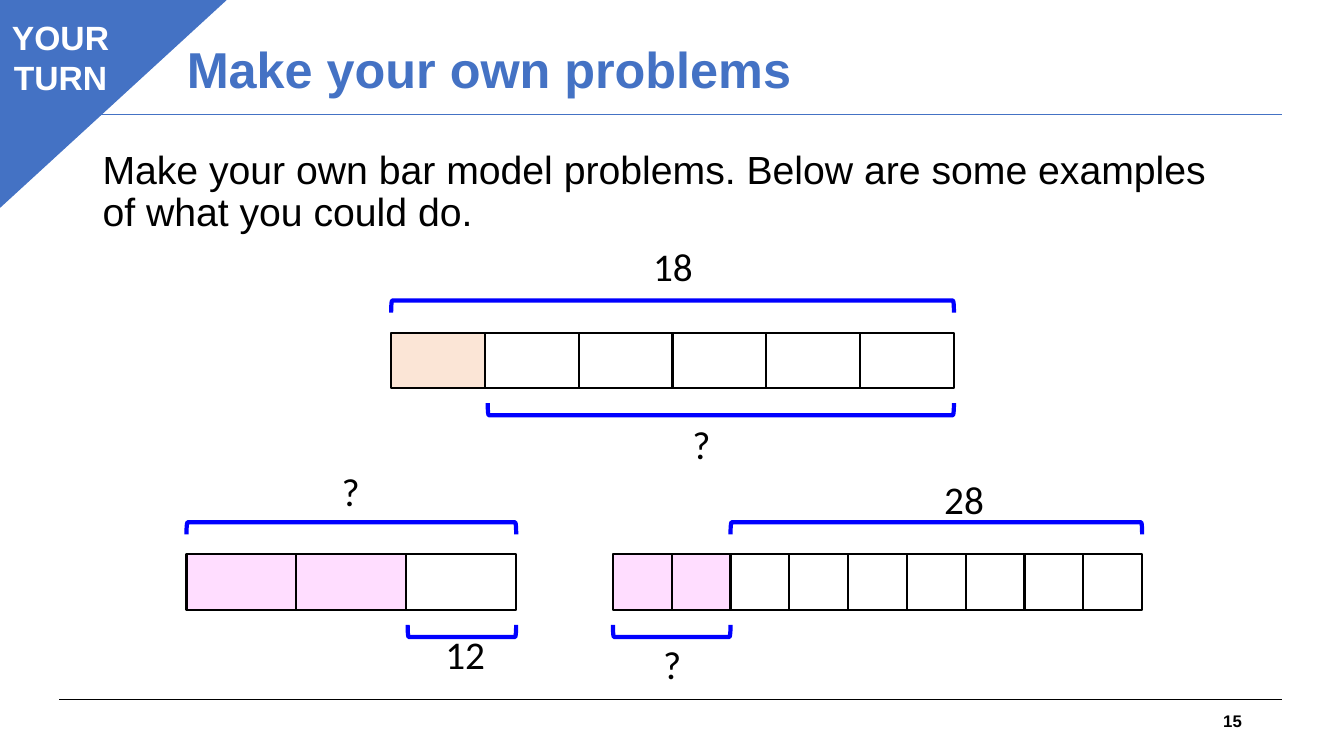
from dataclasses import dataclass

from lxml.etree import SubElement
from pptx import Presentation
from pptx.dml.color import RGBColor
from pptx.enum.shapes import MSO_CONNECTOR, MSO_SHAPE
from pptx.enum.text import MSO_ANCHOR, PP_ALIGN
from pptx.oxml.ns import qn
from pptx.util import Pt


@dataclass(frozen=True)
class Theme:
    accent: RGBColor = RGBColor(0x44, 0x72, 0xC4)
    ink: RGBColor = RGBColor(0, 0, 0)
    paper: RGBColor = RGBColor(0xFF, 0xFF, 0xFF)
    bracket: RGBColor = RGBColor(0, 0, 0xFF)
    peach: RGBColor = RGBColor(0xFB, 0xE5, 0xD6)
    pink: RGBColor = RGBColor(0xFF, 0xDD, 0xFF)
    text_font: str = "Arial"
    label_font: str = "Calibri"
    title_size: int = 36
    body_size: int = 28
    badge_size: int = 24
    number_size: int = 12


THEME = Theme()
CELL_HEIGHT = 39.6
BRACKET_DEPTH = 8.64
GAP_ABOVE = 23
GAP_BELOW = 10.8


@dataclass(frozen=True)
class Bracket:
    """A bracket over cells first to last, with its label's text and place."""
    first: int
    last: int
    text: str
    label_left: float
    label_top: float
    inset: float = 0


def write(shape, text, size, color, font=THEME.text_font, bold=False,
          align=PP_ALIGN.LEFT, anchor=MSO_ANCHOR.TOP, line_spacing=None):
    frame = shape.text_frame
    frame.word_wrap = True
    frame.vertical_anchor = anchor
    frame.text = text
    for paragraph in frame.paragraphs:
        paragraph.alignment = align
        paragraph.line_spacing = line_spacing
        paragraph.font.name = font
        paragraph.font.size = Pt(size)
        paragraph.font.bold = bold
        paragraph.font.color.rgb = color


def add_text(shapes, left, top, width, height, text, size, **style):
    box = shapes.add_textbox(Pt(left), Pt(top), Pt(width), Pt(height))
    write(box, text, size, THEME.ink, **style)


def add_outlined(shapes, kind, left, top, width, height, fill, line, weight):
    shape = shapes.add_shape(kind, Pt(left), Pt(top), Pt(width), Pt(height))
    shape.shadow.inherit = False
    if fill is None:
        shape.fill.background()
    else:
        shape.fill.solid()
        shape.fill.fore_color.rgb = fill
    shape.line.color.rgb = line
    shape.line.width = Pt(weight)
    return shape


def add_rule(shapes, y, color):
    rule = shapes.add_connector(MSO_CONNECTOR.STRAIGHT, Pt(42.5), Pt(y), Pt(915.8), Pt(y))
    rule.line.color.rgb = color
    rule.line.width = Pt(0.75)
    SubElement(rule._element.spPr, qn("a:effectLst"))


def add_bracket(shapes, start, end, top, rotation):
    """Draw a horizontal bracket: a left bracket turned about its centre."""
    length = end - start
    bracket = add_outlined(
        shapes, MSO_SHAPE.LEFT_BRACKET,
        (start + end - BRACKET_DEPTH) / 2, top + (BRACKET_DEPTH - length) / 2,
        BRACKET_DEPTH, length, None, THEME.bracket, 3)
    bracket.rotation = rotation


def add_bar_model(slide, left, top, cell_width, cell_count, shaded, shade, above, below):
    shapes = slide.shapes.add_group_shape().shapes
    for index in range(cell_count):
        fill = shade if index < shaded else THEME.paper
        add_outlined(shapes, MSO_SHAPE.RECTANGLE, left + index * cell_width, top,
                     cell_width, CELL_HEIGHT, fill, THEME.ink, 1.5)
    placings = ((above, top - GAP_ABOVE, 90),
                (below, top + CELL_HEIGHT + GAP_BELOW, 270))
    for bracket, bracket_top, rotation in placings:
        add_bracket(shapes, left + bracket.first * cell_width + bracket.inset,
                    left + bracket.last * cell_width, bracket_top, rotation)
        label_width = 27.4 if len(bracket.text) == 1 else 43.2
        add_text(shapes, bracket.label_left, bracket.label_top, label_width, 41,
                 bracket.text, THEME.body_size, font=THEME.label_font)


def add_badge(shapes):
    corner = add_outlined(shapes, MSO_SHAPE.ISOSCELES_TRIANGLE, -2.2, -1.4, 164.9, 151.2,
                          THEME.accent, THEME.accent, 1)
    corner.adjustments[0] = 0
    corner.rotation = 180
    corner._element.spPr.get_or_add_xfrm().set("flipH", "1")
    badge = add_outlined(shapes, MSO_SHAPE.RECTANGLE, 0.7, 8.6, 85, 59.8,
                         THEME.accent, THEME.accent, 0.75)
    write(badge, "YOUR\nTURN", THEME.badge_size, THEME.paper, bold=True,
          align=PP_ALIGN.CENTER)


def format_title(title, text):
    title.left, title.top, title.width, title.height = Pt(66.2), Pt(28.8), Pt(828), Pt(104.4)
    write(title, text, THEME.title_size, THEME.accent, bold=True, line_spacing=0.9)
    title.text_frame.margin_left = Pt(67.2)


def main():
    presentation = Presentation()
    presentation.slide_width, presentation.slide_height = Pt(960), Pt(540)
    slide = presentation.slides.add_slide(presentation.slide_layouts[5])
    shapes = slide.shapes

    add_rule(shapes, 499.7, THEME.ink)
    add_rule(shapes, 82.1, THEME.accent)
    format_title(shapes.title, "Make your own problems")
    add_text(shapes, 678.2, 500.4, 216, 28.8, "15", THEME.number_size, bold=True,
             align=PP_ALIGN.RIGHT, anchor=MSO_ANCHOR.MIDDLE)
    add_badge(shapes)
    add_text(shapes, 66.2, 103.7, 828, 382.3,
             "Make your own bar model problems. Below are some examples of what you could do.",
             THEME.body_size, line_spacing=0.9)

    add_bar_model(slide, 279.4, 237.6, 67, 6, 1, THEME.peach,
                  Bracket(0, 6, "18", 459.4, 169.2),
                  Bracket(1, 6, "?", 487.4, 296.6, inset=2))
    add_bar_model(slide, 133.2, 396, 78.5, 3, 2, THEME.pink,
                  Bracket(0, 3, "?", 236.9, 330.5),
                  Bracket(2, 3, "12", 311, 446.4, inset=1))
    add_bar_model(slide, 437.8, 396, 42, 9, 2, THEME.pink,
                  Bracket(2, 9, "28", 667.4, 336.2),
                  Bracket(0, 2, "?", 466.6, 453.6))

    presentation.save("out.pptx")


if __name__ == "__main__":
    main()
